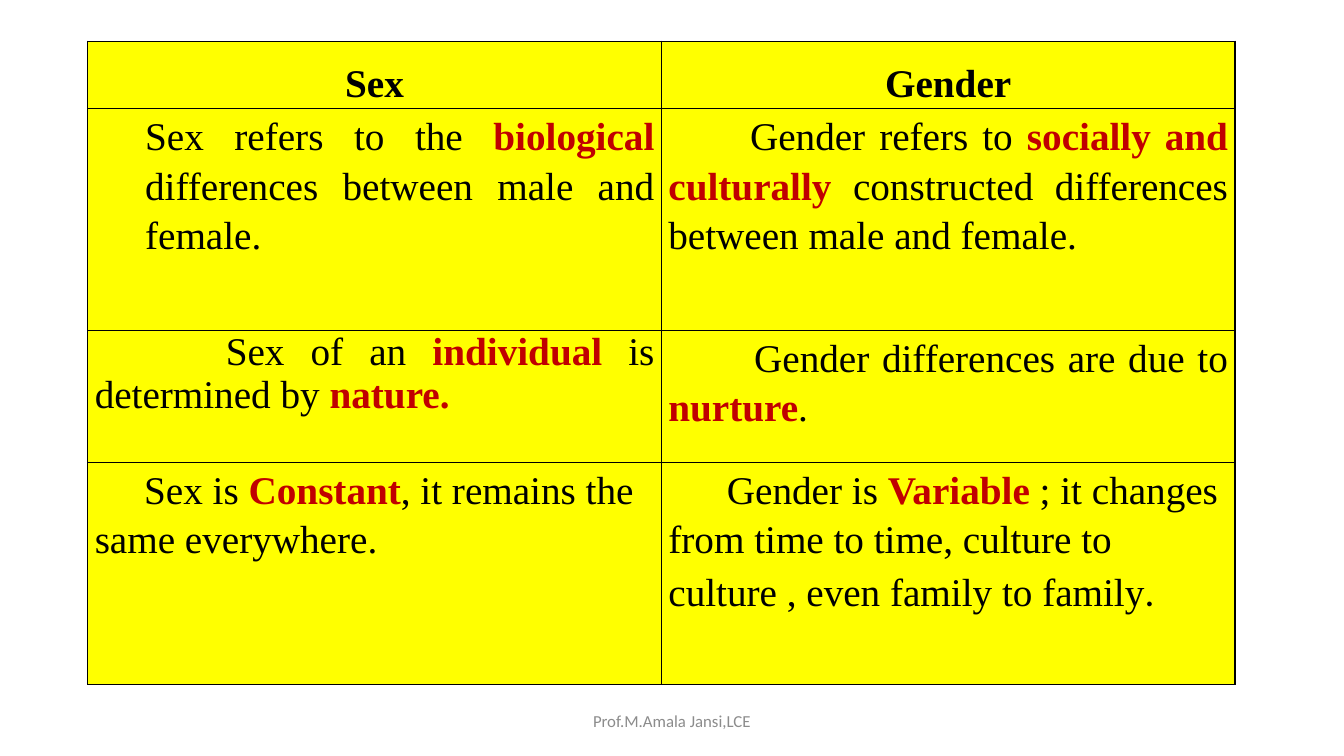
from dataclasses import dataclass

from lxml import etree
from pptx import Presentation
from pptx.dml.color import RGBColor
from pptx.enum.text import MSO_ANCHOR, PP_ALIGN
from pptx.oxml.ns import qn
from pptx.util import Inches, Pt

CENTER, JUSTIFY, LEFT = PP_ALIGN.CENTER, PP_ALIGN.JUSTIFY, PP_ALIGN.LEFT
MIDDLE = MSO_ANCHOR.MIDDLE
SLIDE_WIDTH, SLIDE_HEIGHT = Inches(13.33), Inches(7.5)
BLANK_LAYOUT = 6


@dataclass(frozen=True)
class Theme:
    serif: str = "Times New Roman"
    sans: str = "Calibri"
    body_size: int = 28
    footer_size: int = 12
    ink: str = "000000"
    accent: str = "C00000"
    muted: str = "8C8C8C"
    cell: str = "FFFF00"
    border: str = "000000"
    border_width: float = 1


THEME = Theme()

# Table grid, in inches
TABLE_LEFT, TABLE_TOP = 0.87, 0.41
COLUMN_WIDTH = 5.69
ROW_HEIGHTS = (0.67, 2.2, 1.31, 2.2)
CELL_PADDING = 0.07

# Each cell: text with *emphasis*, then its paragraph format
HEADING = dict(align=CENTER, spacing=1.5, after=10, bold=True)
COMPARISON = [
    [("Sex", HEADING), ("Gender", HEADING)],
    [("Sex refers to the *biological *differences between male and female.",
      dict(align=JUSTIFY, spacing=1.15, margin=0.5)),
     ("Gender refers to *socially and culturally *constructed differences "
      "between male and female.",
      dict(align=JUSTIFY, spacing=1.15, indent=0.81))],
    [("Sex of an *individual *is determined by *nature.*",
      dict(align=JUSTIFY, indent=1.3)),
     ("Gender differences are due to *nurture*.",
      dict(align=JUSTIFY, spacing=1.15, indent=0.85))],
    [("Sex is *Constant*, it remains the same everywhere.",
      dict(spacing=1.15, indent=0.49)),
     ("Gender is *Variable *; it changes from time to time, culture to "
      "culture , even family to family",
      dict(spacing=1.15, indent=0.58, sans_ending="."))],
]


def write_text(frame, text, *, align=LEFT, spacing=1.0, after=0, margin=0,
               indent=0, bold=False, font=THEME.serif, size=THEME.body_size,
               color=THEME.ink, sans_ending=""):
    """Write one paragraph; words between asterisks are bold and accented."""
    paragraph = frame.paragraphs[0]
    paragraph.alignment = align
    paragraph.line_spacing = spacing
    paragraph.space_after = Pt(after)
    properties = paragraph._p.get_or_add_pPr()
    properties.set("marL", str(Inches(margin)))
    properties.set("indent", str(Inches(indent)))

    pieces = [(words, index % 2 == 1, font)
              for index, words in enumerate(text.split("*"))]
    pieces.append((sans_ending, False, THEME.sans))
    for words, emphasized, typeface in pieces:
        if not words:
            continue
        run = paragraph.add_run()
        run.text = words
        run.font.name = typeface
        run.font.size = Pt(size)
        run.font.bold = bold or emphasized
        run.font.color.rgb = RGBColor.from_string(
            THEME.accent if emphasized else color)


def style_cell(cell):
    """Give a cell its padding, four borders and fill."""
    cell.margin_left = cell.margin_right = Inches(CELL_PADDING)
    cell.margin_top = cell.margin_bottom = 0
    properties = cell._tc.get_or_add_tcPr()
    for side in ("a:lnL", "a:lnR", "a:lnT", "a:lnB"):
        line = etree.SubElement(properties, qn(side),
                                w=str(Pt(THEME.border_width)))
        fill = etree.SubElement(line, qn("a:solidFill"))
        etree.SubElement(fill, qn("a:srgbClr"), val=THEME.border)
    cell.fill.solid()
    cell.fill.fore_color.rgb = RGBColor.from_string(THEME.cell)


def add_comparison(slide):
    column_count = len(COMPARISON[0])
    table = slide.shapes.add_table(
        len(COMPARISON), column_count, Inches(TABLE_LEFT), Inches(TABLE_TOP),
        Inches(COLUMN_WIDTH * column_count), Inches(sum(ROW_HEIGHTS))).table
    for column in table.columns:
        column.width = Inches(COLUMN_WIDTH)
    for row, height in zip(table.rows, ROW_HEIGHTS):
        row.height = Inches(height)
    for row, statements in zip(table.rows, COMPARISON):
        for cell, (text, text_format) in zip(row.cells, statements):
            style_cell(cell)
            write_text(cell.text_frame, text, **text_format)


def add_footer(slide, text):
    width, height = Inches(4.5), Inches(0.4)
    footer = slide.shapes.add_textbox(
        (SLIDE_WIDTH - width) // 2, Inches(6.95), width, height)
    frame = footer.text_frame
    frame.word_wrap = True
    frame.vertical_anchor = MIDDLE
    write_text(frame, text, align=CENTER, font=THEME.sans,
               size=THEME.footer_size, color=THEME.muted)


def main():
    presentation = Presentation()
    presentation.slide_width = SLIDE_WIDTH
    presentation.slide_height = SLIDE_HEIGHT
    slide = presentation.slides.add_slide(
        presentation.slide_layouts[BLANK_LAYOUT])
    add_comparison(slide)
    add_footer(slide, "Prof.M.Amala Jansi,LCE")
    presentation.save("out.pptx")


if __name__ == "__main__":
    main()
